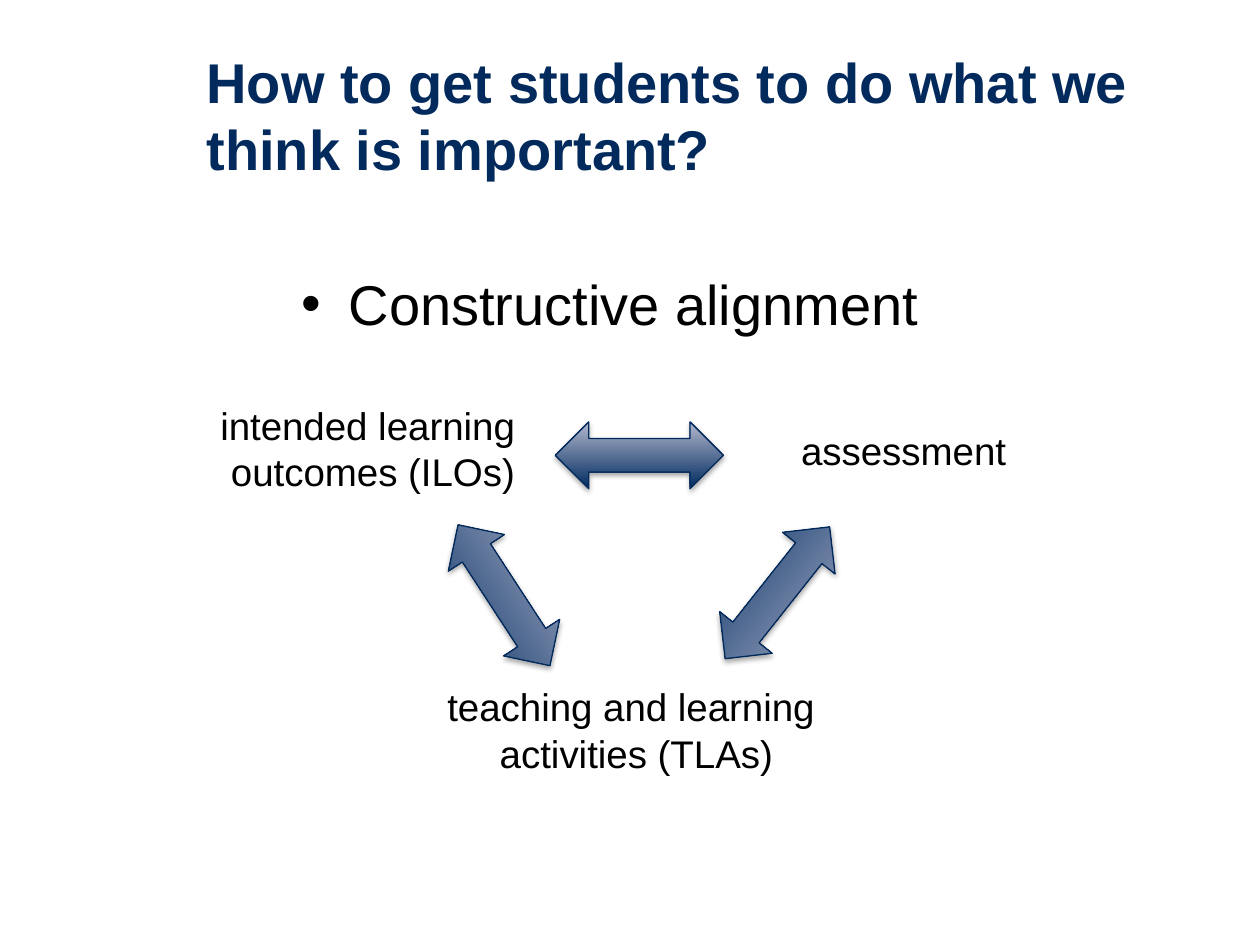
from dataclasses import dataclass

from lxml import etree
from pptx import Presentation
from pptx.dml.color import RGBColor
from pptx.enum.shapes import MSO_SHAPE
from pptx.enum.text import MSO_ANCHOR, MSO_AUTO_SIZE, PP_ALIGN
from pptx.oxml.ns import qn
from pptx.util import Cm, Pt

ARROW = MSO_SHAPE.LEFT_RIGHT_ARROW
MIDDLE = MSO_ANCHOR.MIDDLE
NO_FIT = MSO_AUTO_SIZE.NONE
LEFT, CENTER = PP_ALIGN.LEFT, PP_ALIGN.CENTER


@dataclass(frozen=True)
class Theme:
    font: str = "Arial"
    head: int = 32
    label: int = 22
    navy: str = "032A5C"
    ink: str = "000000"
    edge: str = "01295C"
    dark: str = "002A5F"
    pale: str = "B3B8CE"


THEME = Theme()

TITLE = ["How to get students to do what we think is important?"]
TOPIC = ["Constructive alignment"]

# Boxes are left, top, width, height in cm
TITLE_BOX = (3.91, 0.81, 20.22, 3.0)
TOPIC_BOX = (4.72, 4.98, 15.16, 2.26)
LABELS = [
    (["intended learning ", "outcomes (ILOs)"], (3.38, 7.77, 8.28, 2.54)),
    (["teaching and learning ", "activities (TLAs)"], (8.69, 13.44, 8.28, 2.54)),
    (["assessment"], (15.04, 7.8, 6.35, 2.54)),
]

# Centre x, centre y in cm, then turn in degrees
ARROWS = [(12.89, 9.18, 0), (10.16, 12.0, 56.9), (15.67, 11.95, 128.4)]
ARROW_SIZE = (3.39, 1.35)


def rgb(code):
    return RGBColor.from_string(code)


def place(shape, box):
    shape.left, shape.top, shape.width, shape.height = map(Cm, box)


def write(shape, lines, size, color, align, bold=False):
    frame = shape.text_frame
    frame.auto_size = NO_FIT
    frame.vertical_anchor = MIDDLE
    frame.text = "\n".join(lines)
    for para in frame.paragraphs:
        para.alignment = align
        para.space_before = Pt(0)
        para.font.name = THEME.font
        para.font.size = Pt(size)
        para.font.bold = bold
        para.font.color.rgb = rgb(color)


def drop_bullet(para):
    props = para._p.get_or_add_pPr()
    props.set("marL", "0")
    props.set("indent", "0")
    etree.SubElement(props, qn("a:buNone"))


def add_label(slide, lines, box):
    shape = slide.shapes.add_textbox(*map(Cm, box))
    frame = shape.text_frame
    frame.word_wrap = False
    frame.margin_left = frame.margin_right = Cm(0.18)
    frame.margin_top = frame.margin_bottom = Cm(0.1)
    write(shape, lines, THEME.label, THEME.ink, CENTER)


def add_shadow(shape):
    shape.shadow.inherit = False
    effects = shape._element.spPr.find(qn("a:effectLst"))
    outer = etree.SubElement(
        effects, qn("a:outerShdw"), blurRad=str(Pt(3.1)), dist=str(Pt(1.8)),
        dir="5400000", rotWithShape="0")
    color = etree.SubElement(outer, qn("a:srgbClr"), val=THEME.ink)
    etree.SubElement(color, qn("a:alpha"), val="35000")


def add_arrow(slide, mid_x, mid_y, turn):
    wide, high = ARROW_SIZE
    box = (mid_x - wide / 2, mid_y - high / 2, wide, high)
    shape = slide.shapes.add_shape(ARROW, *map(Cm, box))
    shape.rotation = turn
    shape.fill.gradient()
    shape.fill.gradient_angle = 90
    for stop, code in zip(shape.fill.gradient_stops, (THEME.dark, THEME.pale)):
        stop.color.rgb = rgb(code)
        stop.position = float(code == THEME.pale)
    shape.line.color.rgb = rgb(THEME.edge)
    shape.line.width = Pt(0.75)
    add_shadow(shape)


def main():
    deck = Presentation()
    deck.slide_width, deck.slide_height = Cm(25.4), Cm(19.05)
    slide = deck.slides.add_slide(deck.slide_layouts[1])
    title, topic = slide.placeholders
    place(title, TITLE_BOX)
    write(title, TITLE, THEME.head, THEME.navy, LEFT, bold=True)
    place(topic, TOPIC_BOX)
    drop_bullet(topic.text_frame.paragraphs[0])
    write(topic, TOPIC, THEME.head, THEME.ink, CENTER)
    for lines, box in LABELS:
        add_label(slide, lines, box)
    for arrow in ARROWS:
        add_arrow(slide, *arrow)
    deck.save("out.pptx")


if __name__ == "__main__":
    main()
